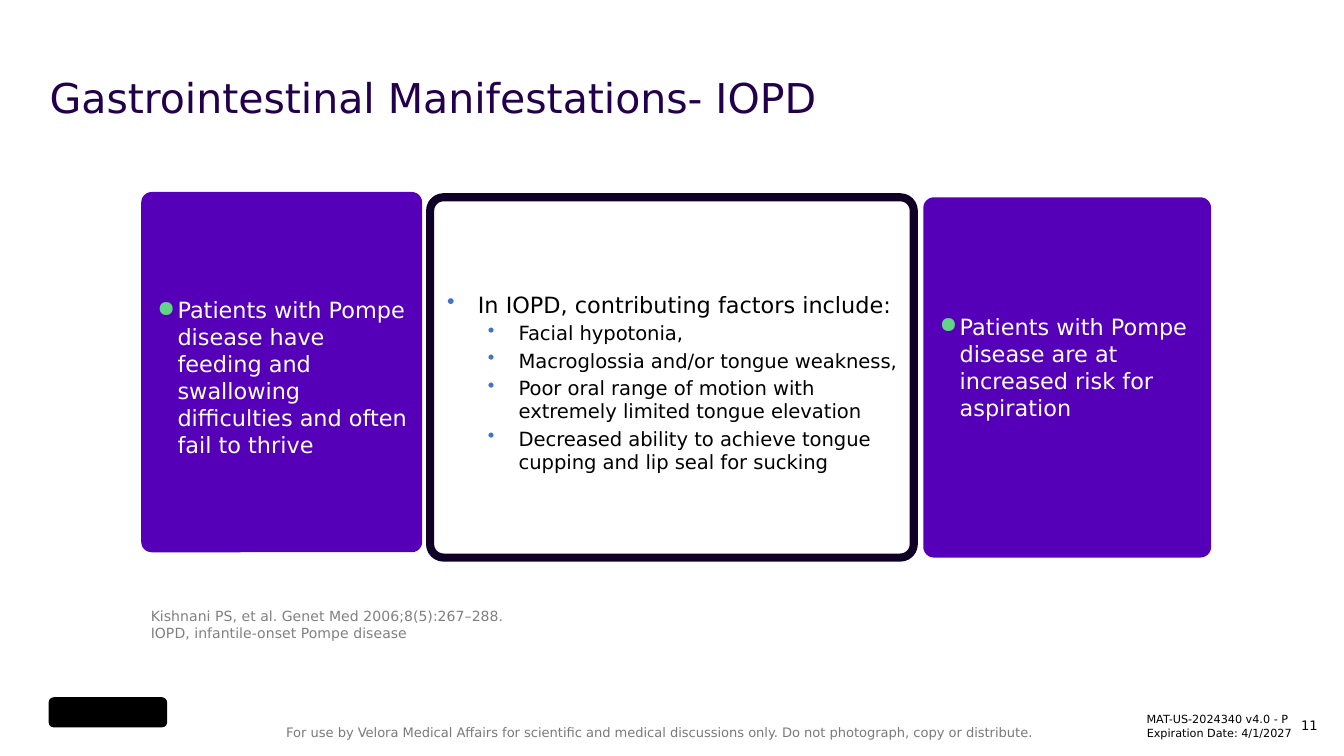
from lxml import etree
from pptx import Presentation
from pptx.dml.color import RGBColor
from pptx.enum.shapes import MSO_SHAPE
from pptx.enum.text import MSO_ANCHOR, PP_ALIGN
from pptx.oxml.ns import qn
from pptx.util import Cm, Pt

ROUNDED = MSO_SHAPE.ROUNDED_RECTANGLE
TOP, MIDDLE = MSO_ANCHOR.TOP, MSO_ANCHOR.MIDDLE
LEFT, RIGHT = PP_ALIGN.LEFT, PP_ALIGN.RIGHT

FONT = "DejaVu Sans"
PURPLE, INK, WHITE, BLACK = "5500B8", "110026", "FFFFFF", "000000"
GREEN, BLUE = "62D488", "4472C4"
CARD_HEIGHT = 6.81
CARD_RADIUS = 0.037

FACTORS = [
    "Facial hypotonia,",
    "Macroglossia and/or tongue weakness,",
    "Poor oral range of motion with extremely limited tongue elevation",
    "Decreased ability to achieve tongue cupping and lip seal for sucking",
]


def rgb(value):
    return RGBColor.from_string(value)


def setup_frame(tf, insets, anchor):
    """Set wrapping, anchor and insets (left, top, right, bottom in cm)."""
    tf.word_wrap = True
    tf.vertical_anchor = anchor
    tf.margin_left, tf.margin_top, tf.margin_right, tf.margin_bottom = map(Cm, insets)


def add_run(p, text, size, color):
    r = p.add_run()
    r.text = text
    r.font.name = FONT
    r.font.size = Pt(size)
    r.font.color.rgb = rgb(color)


def set_bullet(p, char, color, margin, hanging):
    pPr = p._p.get_or_add_pPr()
    pPr.set("marL", str(Cm(margin)))
    pPr.set("indent", str(-Cm(hanging)))
    clr = etree.SubElement(pPr, qn("a:buClr"))
    etree.SubElement(clr, qn("a:srgbClr"), val=color)
    etree.SubElement(pPr, qn("a:buChar"), char=char)


def add_text(s, box, lines, size, color, insets=(0.25, 0.13, 0.25, 0.13),
             anchor=TOP, align=LEFT, spacing=None):
    """Add a text box with one paragraph for each line."""
    tf = s.shapes.add_textbox(*map(Cm, box)).text_frame
    setup_frame(tf, insets, anchor)
    for i, line in enumerate(lines):
        p = tf.add_paragraph() if i else tf.paragraphs[0]
        p.alignment = align
        if spacing:
            p.line_spacing = spacing
        for j, part in enumerate(line.split("\n")):
            if j:
                p.add_line_break()
            add_run(p, part, size, color)


def add_rounded(s, box, fill=None, line=None):
    sp = s.shapes.add_shape(ROUNDED, *map(Cm, box))
    sp.shadow.inherit = False
    if fill:
        sp.fill.solid()
        sp.fill.fore_color.rgb = rgb(fill)
    else:
        sp.fill.background()
    if line:
        sp.line.color.rgb = rgb(line)
        sp.line.width = Pt(4.33)
    else:
        sp.line.fill.background()
    return sp


def add_card(s, left, top, width, items, fill=None, line=None, lift=0, drop=0):
    """Add a card of bullets; lift and drop move its text off the middle.

    Each item is (text, size, color, bullet), with bullet as set_bullet takes it.
    """
    sp = add_rounded(s, (left, top, width, CARD_HEIGHT), fill, line)
    sp.adjustments[0] = CARD_RADIUS
    tf = sp.text_frame
    setup_frame(tf, (0.25, 0.13 + drop, 0.1, 0.13 + lift), MIDDLE)
    for i, (text, size, color, bullet) in enumerate(items):
        p = tf.add_paragraph() if i else tf.paragraphs[0]
        p.alignment = LEFT
        if i:
            p.space_before = Pt(2)
        set_bullet(p, *bullet)
        add_run(p, text, size, color)


def main():
    prs = Presentation()
    prs.slide_width, prs.slide_height = Cm(25.4), Cm(14.29)
    s = prs.slides.add_slide(prs.slide_layouts[6])

    # Brand mark placeholder
    add_rounded(s, (0.92, 13.18, 2.24, 0.57), fill=BLACK)

    # Title
    add_text(s, (0.94, 1.12, 23.57, 1.55), ["Gastrointestinal Manifestations- IOPD"],
             22, "23004C", insets=(0, 0, 0, 0), anchor=MIDDLE, spacing=0.9)

    # Three cards
    dot = ("●", GREEN, 0.38, 0.38)
    add_card(s, 2.67, 3.63, 5.31, [
        ("Patients with Pompe disease have feeding and swallowing "
         "difficulties and often fail to thrive", 12, WHITE, dot),
    ], fill=PURPLE, drop=0.18)
    add_card(s, 8.13, 3.73, 9.14, [
        ("In IOPD, contributing factors include:", 12, BLACK, ("•", BLUE, 0.58, 0.58)),
        *[(text, 10.5, BLACK, ("•", BLUE, 1.35, 0.58)) for text in FACTORS],
    ], line=INK, drop=0.18)
    add_card(s, 17.45, 3.73, 5.44, [
        ("Patients with Pompe disease are at increased risk for aspiration",
         12, WHITE, dot),
    ], fill=PURPLE, lift=0.4)

    # Reference and abbreviation
    narrow = (0.18, 0.1, 0.18, 0.1)
    add_text(s, (2.67, 11.38, 8.59, 0.84),
             ["Kishnani PS, et al. Genet Med 2006;8(5):267–288.",
              "IOPD, infantile-onset Pompe disease"], 7.5, "808080", insets=narrow)

    # Footer
    add_text(s, (23.83, 13.44, 1.32, 0.58), ["11"], 7, BLACK, align=RIGHT)
    add_text(s, (5.16, 13.56, 15.11, 0.56),
             ["For use by Velora Medical Affairs for scientific and medical discussions "
              "only. Do not photograph, copy or distribute."], 7, "7A7A7A")
    add_text(s, (20.07, 13.34, 4.52, 0.76),
             ["MAT-US-2024340 v4.0 - P \nExpiration Date: 4/1/2027"], 6, BLACK,
             insets=narrow, anchor=MIDDLE, align=RIGHT)

    prs.save("out.pptx")


if __name__ == "__main__":
    main()
